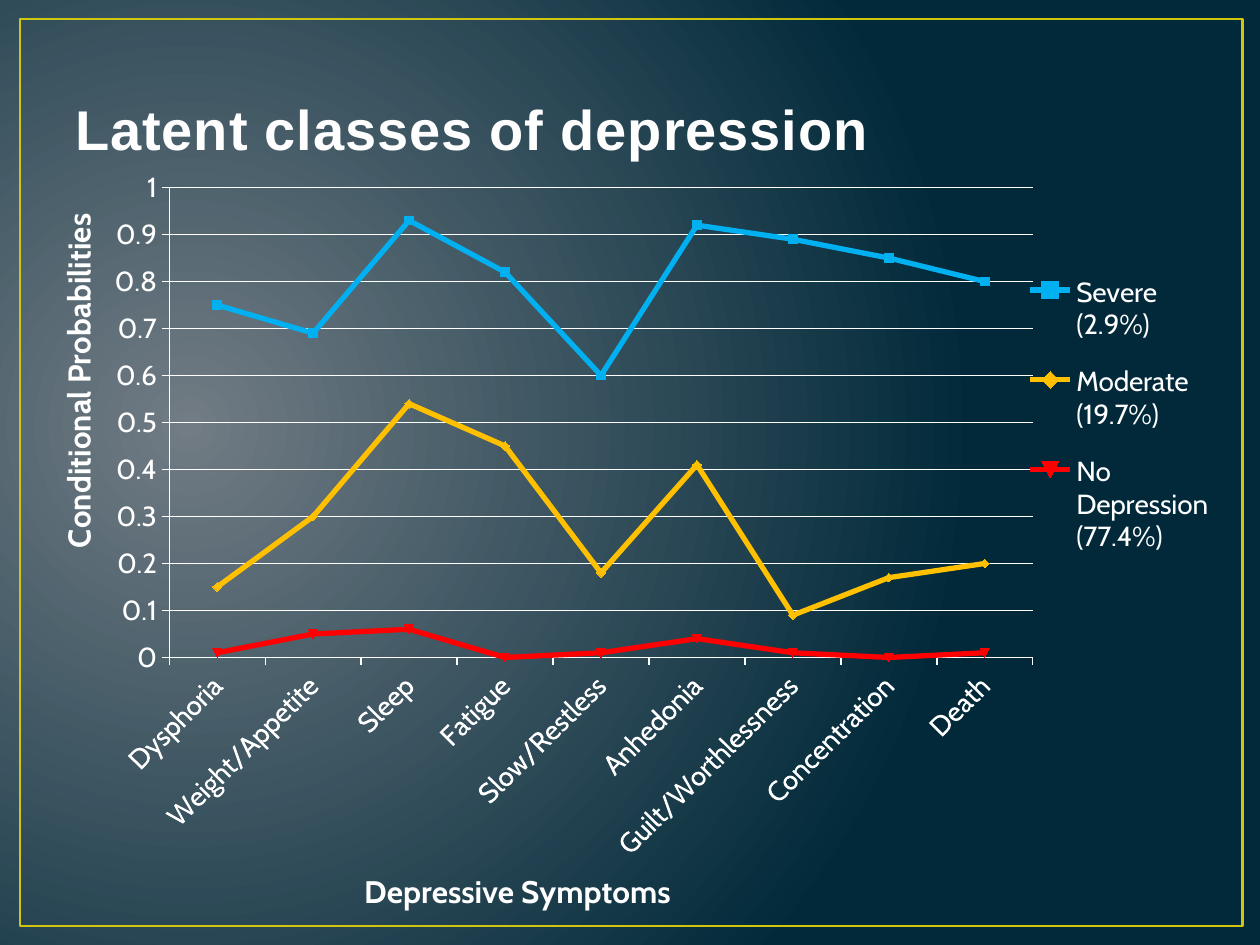
from lxml import etree
from pptx import Presentation
from pptx import util as u
from pptx.chart.data import CategoryChartData
from pptx.dml.color import RGBColor
from pptx.enum import chart as ch, shapes, text
from pptx.oxml import parse_xml
from pptx.oxml.ns import nsdecls, qn

COLORS = {
    "glow": "717C84", "night": "01293A", "frame": "CFC60D",
    "title": "FEFEFE", "outline": "384F55", "white": "FFFFFF",
    "severe": "00B0F0", "moderate": "FFC000", "none": "FF0000", "none_marker": "C00000",
}
SYMPTOMS = ["Dysphoria", "Weight/Appetite", "Sleep", "Fatigue", "Slow/Restless",
            "Anhedonia", "Guilt/Worthlessness", "Concentration", "Death"]
# name, line colour, marker colour, conditional probabilities
CLASSES = [
    ("Severe\n(2.9%)", "severe", "severe",
     [0.75, 0.69, 0.93, 0.82, 0.6, 0.92, 0.89, 0.85, 0.8]),
    ("Moderate (19.7%)", "moderate", "moderate",
     [0.15, 0.3, 0.54, 0.45, 0.18, 0.41, 0.09, 0.17, 0.2]),
    ("No Depression (77.4%)", "none", "none_marker",
     [0.01, 0.05, 0.06, 0, 0.01, 0.04, 0.01, 0, 0.01]),
]


def rgb(name):
    return RGBColor.from_string(COLORS[name])


def style_font(font, name, size, color, bold=False):
    font.name, font.size, font.bold = name, u.Pt(size), bold
    font.color.rgb = rgb(color)


def set_background(slide):
    """Fill the background with a circular gradient around a point at the left."""
    fill = slide.background.fill
    fill.gradient()
    for stop, color in zip(fill.gradient_stops, ("glow", "night")):
        stop.color.rgb = rgb(color)
    for stop, position in zip(fill.gradient_stops, (0, 1)):
        stop.position = position
    lin = next(slide.background._cSld.iter(qn("a:lin")))
    lin.getparent().replace(lin, parse_xml(
        f'<a:path {nsdecls("a")} path="circle">'
        '<a:fillToRect l="15000" t="50000" r="85000" b="60000"/></a:path>'))


def add_frame(slide, x, y, w, h):
    sp = slide.shapes.add_shape(shapes.MSO_SHAPE.RECTANGLE, x, y, w, h)
    sp.shadow.inherit = False
    sp.fill.background()
    sp.line.color.rgb = rgb("frame")
    sp.line.width = u.Pt(1.5)


def add_title(slide, x, y, w, h):
    tf = slide.shapes.add_textbox(x, y, w, h).text_frame
    tf.word_wrap = True
    tf.vertical_anchor = text.MSO_ANCHOR.BOTTOM
    r = tf.paragraphs[0].add_run()
    r.text = "Latent classes of depression"
    style_font(r.font, "Arial", 32, "title", True)
    props = r._r.get_or_add_rPr()
    props.set("spc", "50")
    props.insert(0, parse_xml(
        f'<a:ln {nsdecls("a")} w="{u.Pt(1.05)}"><a:solidFill>'
        f'<a:srgbClr val="{COLORS["outline"]}"/></a:solidFill></a:ln>'))


def place(element, x, y, w=None, h=None, inner=False):
    """Give a chart part a fixed place, in fractions of the chart."""
    for old in element.findall(qn("c:layout")):
        element.remove(old)
    layout = parse_xml(f'<c:layout {nsdecls("c")}><c:manualLayout/></c:layout>')
    settings = [("layoutTarget", "inner")] if inner else []
    settings += [("xMode", "edge"), ("yMode", "edge"), ("x", x), ("y", y)]
    if w is not None:
        settings += [("w", w), ("h", h)]
    for tag, value in settings:
        etree.SubElement(layout[0], qn(f"c:{tag}")).set("val", str(value))
    before = [i for i, child in enumerate(element)
              if child.tag in (qn("c:tx"), qn("c:legendPos"), qn("c:legendEntry"))]
    element.insert(before[-1] + 1 if before else 0, layout)


def style_axis(axis, title, x, y):
    p = axis.axis_title.text_frame.paragraphs[0]
    r = p.add_run()
    r.text = title
    style_font(r.font, "Cabin", 18, "white", True)
    place(axis.axis_title._element, x, y)
    style_font(axis.tick_labels.font, "Cabin", 16, "white")
    axis.major_tick_mark = ch.XL_TICK_MARK.OUTSIDE
    axis.minor_tick_mark = ch.XL_TICK_MARK.NONE
    axis.format.line.color.rgb = rgb("white")
    axis.format.line.width = u.Pt(0.75)


def style_series(series, line_color, marker_color):
    series.smooth = False
    series.format.line.color.rgb = rgb(line_color)
    series.format.line.width = u.Pt(3)
    marker = series.marker
    marker.style = ch.XL_MARKER_STYLE.AUTOMATIC
    marker.size = 5
    marker.format.fill.solid()
    marker.format.fill.fore_color.rgb = rgb(marker_color)
    marker.format.line.color.rgb = rgb(marker_color)


def add_class_chart(slide, x, y, w, h):
    data = CategoryChartData()
    data.categories = SYMPTOMS
    for name, _, _, values in CLASSES:
        data.add_series(name, values)
    chart = slide.shapes.add_chart(
        ch.XL_CHART_TYPE.LINE_MARKERS, x, y, w, h, data).chart
    chart.has_title = False
    style_font(chart.font, "Cabin", 10, "white")
    plot = chart.plots[0]
    plot.vary_by_categories = False
    for series, (_, line_color, marker_color, _) in zip(plot.series, CLASSES):
        style_series(series, line_color, marker_color)

    style_axis(chart.category_axis, "Depressive Symptoms", 0.27, 0.94)
    labels = chart.category_axis._element.find(qn("c:txPr"))
    labels.find(qn("a:bodyPr")).set("rot", str(-45 * 60000))
    values = chart.value_axis
    style_axis(values, "Conditional Probabilities", 0.01, 0.12)
    values.minimum_scale, values.maximum_scale, values.major_unit = 0, 1, 0.1
    values.tick_labels.number_format = "General"
    values.tick_labels.number_format_is_linked = False
    values.has_major_gridlines = True
    values.major_gridlines.format.line.color.rgb = rgb("white")
    values.major_gridlines.format.line.width = u.Pt(0.75)

    chart.has_legend = True
    chart.legend.position = ch.XL_LEGEND_POSITION.RIGHT
    chart.legend.include_in_layout = False
    style_font(chart.legend.font, "Cabin", 16, "white")
    place(chart.legend._element, 0.84, 0.17, 0.16, 0.41)
    plot_area = next(chart._chartSpace.iter(qn("c:plotArea")))
    place(plot_area, 0.11, 0.09, 0.73, 0.59, inner=True)


def main():
    prs = Presentation()
    prs.slide_width, prs.slide_height = u.Inches(10), u.Inches(7.5)
    slide = prs.slides.add_slide(prs.slide_layouts[6])
    set_background(slide)
    add_frame(slide, u.Inches(0.16), u.Inches(0.15), u.Inches(9.7), u.Inches(7.2))
    add_title(slide, u.Inches(0.5), u.Inches(0.08), u.Inches(9), u.Inches(1.25))
    add_class_chart(slide, u.Inches(0.31), u.Inches(0.92), u.Inches(9.39), u.Inches(6.39))
    prs.save("out.pptx")


if __name__ == "__main__":
    main()
